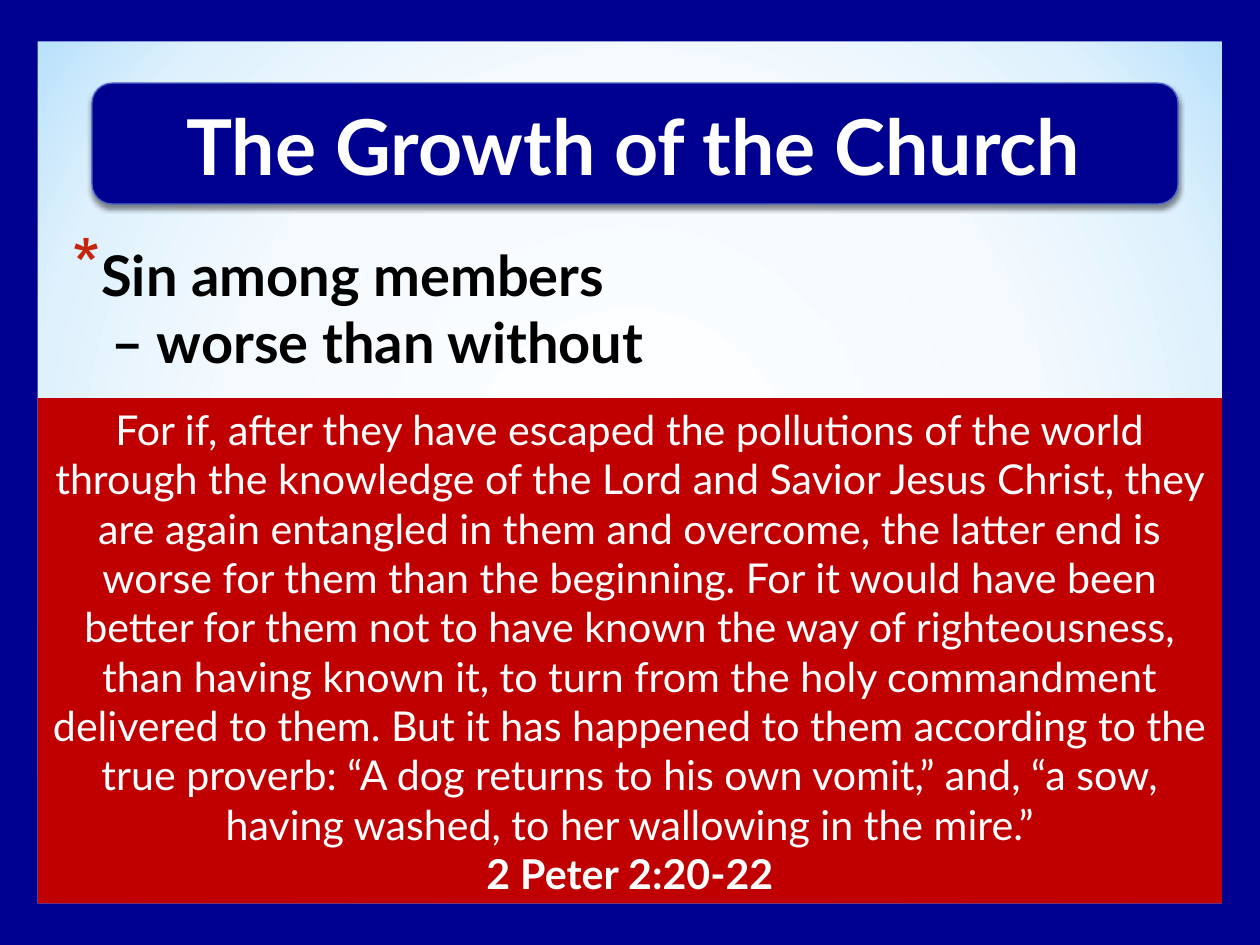
from dataclasses import dataclass

import lxml.etree
import pptx
import pptx.dml.color
import pptx.enum.shapes
import pptx.enum.text
import pptx.oxml
import pptx.oxml.ns
import pptx.util

WIDTH, HEIGHT = 10, 7.5
SIDE, EDGE = 0.3, 0.33  # frame thickness: left and right, top and bottom
PASSAGE_TOP = 3.16
NAVY, RED, WHITE, BLACK = "000090", "C00000", "FFFFFF", "000000"
FONT = "Lato"
NAMESPACE = 'xmlns:a="http://schemas.openxmlformats.org/drawingml/2006/main"'

PASSAGE = (
    "For if, after they have escaped the pollutions of the world through the "
    "knowledge of the Lord and Savior Jesus Christ, they are again entangled in "
    "them and overcome, the latter end is worse for them than the beginning. For "
    "it would have been better for them not to have known the way of "
    "righteousness, than having known it, to turn from the holy commandment "
    "delivered to them. But it has happened to them according to the true "
    "proverb: “A dog returns to his own vomit,” and, “a sow, having washed, to "
    "her wallowing in the mire.”"
)


@dataclass
class Box:
    left: float
    top: float
    width: float
    height: float

    def inches(self) -> list:
        return [pptx.util.Inches(value)
                for value in (self.left, self.top, self.width, self.height)]


def color(value: str) -> pptx.dml.color.RGBColor:
    return pptx.dml.color.RGBColor.from_string(value)


def add_panel(slide, box: Box, fill: str, rounded: bool = False):
    kinds = pptx.enum.shapes.MSO_SHAPE
    kind = kinds.ROUNDED_RECTANGLE if rounded else kinds.RECTANGLE
    shape = slide.shapes.add_shape(kind, *box.inches())
    shape.shadow.inherit = False
    shape.fill.solid()
    shape.fill.fore_color.rgb = color(fill)
    shape.line.fill.background()
    return shape


def add_text(slide, box: Box, lines: list[str], size: float, ink: str,
             bold: bool = False, centered: bool = True):
    frame = slide.shapes.add_textbox(*box.inches()).text_frame
    frame.word_wrap = True
    frame.text = "\n".join(lines)
    for paragraph in frame.paragraphs:
        if centered:
            paragraph.alignment = pptx.enum.text.PP_ALIGN.CENTER
        for run in paragraph.runs:
            run.font.name = FONT
            run.font.size = pptx.util.Pt(size)
            run.font.bold = bold
            run.font.color.rgb = color(ink)
    return frame


def set_glow_background(slide) -> None:
    """Radial gradient, white in the middle and light blue at the corners."""
    slide.background.fill.gradient()
    properties = slide.background._cSld.bg.bgPr
    gradient = properties.find(pptx.oxml.ns.qn("a:gradFill"))
    stops = [(0, WHITE), (52, "F4FAFE"), (76, "DFF1FD"), (100, "A8DAFA")]
    stop_xml = "".join(
        f'<a:gs pos="{place * 1000}"><a:srgbClr val="{value}"/></a:gs>'
        for place, value in stops)
    properties.replace(gradient, pptx.oxml.parse_xml(
        f'<a:gradFill {NAMESPACE}><a:gsLst>{stop_xml}</a:gsLst>'
        '<a:path path="circle"><a:fillToRect l="50000" t="50000" '
        'r="50000" b="50000"/></a:path></a:gradFill>'))


def add_drop_shadow(shape) -> None:
    effects = shape._element.spPr.find(pptx.oxml.ns.qn("a:effectLst"))
    effects.append(pptx.oxml.parse_xml(
        f'<a:outerShdw {NAMESPACE} blurRad="39370" dist="22860" dir="5400000" '
        f'rotWithShape="0"><a:srgbClr val="{BLACK}"><a:alpha val="45000"/>'
        '</a:srgbClr></a:outerShdw>'))


def add_star_bullet(paragraph) -> None:
    properties = paragraph._p.get_or_add_pPr()
    properties.set("marL", str(pptx.util.Inches(0.25)))
    properties.set("indent", str(pptx.util.Inches(-0.2)))
    for tag, value in (("buSzPct", "130000"), ("buChar", "*")):
        name = "char" if tag == "buChar" else "val"
        lxml.etree.SubElement(
            properties, pptx.oxml.ns.qn(f"a:{tag}")).set(name, value)
    properties.insert(0, pptx.oxml.parse_xml(
        f'<a:buClr {NAMESPACE}><a:srgbClr val="C3260C"/></a:buClr>'))


def main() -> None:
    presentation = pptx.Presentation()
    presentation.slide_width = pptx.util.Inches(WIDTH)
    presentation.slide_height = pptx.util.Inches(HEIGHT)
    slide = presentation.slides.add_slide(presentation.slide_layouts[6])
    set_glow_background(slide)

    # Frame
    for box in (Box(0, 0, SIDE, HEIGHT), Box(WIDTH - SIDE, 0, SIDE, HEIGHT),
                Box(0, 0, WIDTH, EDGE), Box(0, HEIGHT - EDGE, WIDTH, EDGE)):
        add_panel(slide, box, NAVY)

    # Title
    banner = add_panel(slide, Box(0.73, 0.66, 8.62, 0.96), NAVY, rounded=True)
    banner.line.color.rgb = color("4E67C8")
    banner.line.width = pptx.util.Pt(0.75)
    add_drop_shadow(banner)
    add_text(slide, Box(0.79, 0.73, 8.48, 0.84), ["The Growth of the Church"],
             44, WHITE, bold=True)

    # Main point
    point = add_text(slide, Box(0.43, 1.86, 9.15, 1.25),
                     ["Sin among members\v – worse than without"],
                     32, BLACK, bold=True, centered=False)
    add_star_bullet(point.paragraphs[0])

    # Bible passage
    inner_width = WIDTH - 2 * SIDE
    passage_height = HEIGHT - EDGE - PASSAGE_TOP
    passage_box = Box(SIDE, PASSAGE_TOP, inner_width, passage_height)
    add_panel(slide, passage_box, RED)
    passage = add_text(slide, passage_box, [PASSAGE, "2 Peter 2:20-22"],
                       23.5, WHITE)
    passage.paragraphs[-1].runs[0].font.bold = True

    presentation.save("out.pptx")


if __name__ == "__main__":
    main()
